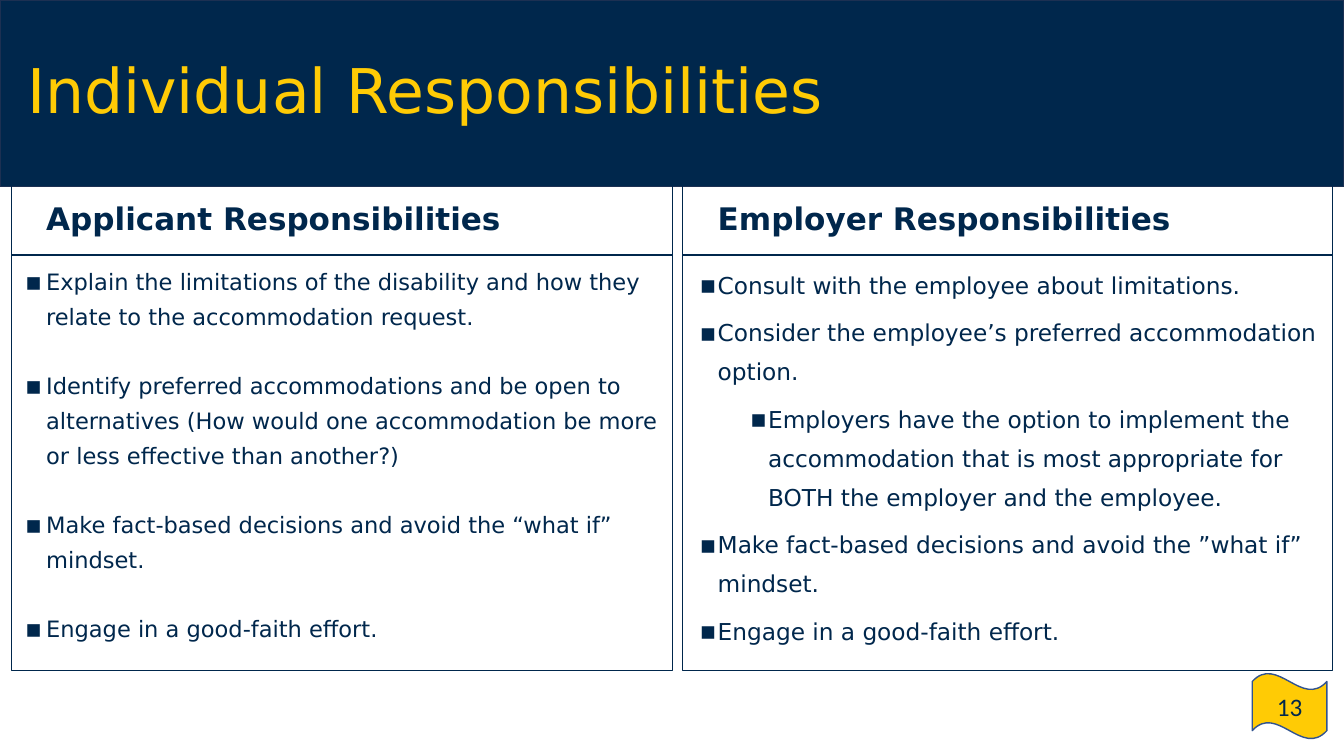
from lxml.etree import SubElement
from pptx import Presentation
from pptx.dml.color import RGBColor
from pptx.enum.shapes import MSO_SHAPE
from pptx.enum.text import MSO_ANCHOR, PP_ALIGN
from pptx.oxml.ns import qn
from pptx.util import Pt

PX = 9144  # EMU per px, 100 px to the inch
COLORS = {"navy": "00274C", "gold": "FFCB05", "band_line": "1C3052", "wave_line": "31538F"}
FONT = "DejaVu Sans"
HEADING_HEIGHT = 69

APPLICANT = {
    "heading": "Applicant Responsibilities",
    "size": 16.1, "line_spacing": 1.3, "gap": 24, "hanging": 21, "bullet_size": 112,
    "items": [
        (0, "Explain the limitations of the disability and how they relate to the accommodation request."),
        (0, "Identify preferred accommodations and be open to alternatives "
            "(How would one accommodation be more or less effective than another?)"),
        (0, "Make fact-based decisions and avoid the “what if” mindset."),
        (0, "Engage in a good-faith effort."),
    ],
}
EMPLOYER = {
    "heading": "Employer Responsibilities",
    "size": 16.6, "line_spacing": 1.4, "gap": 6, "hanging": 18, "bullet_size": 108,
    "items": [
        (0, "Consult with the employee about limitations."),
        (0, "Consider the employee’s preferred accommodation option."),
        (1, "Employers have the option to implement the accommodation that is "
            "most appropriate for BOTH the employer and the employee."),
        (0, "Make fact-based decisions and avoid the ”what if” mindset."),
        (0, "Engage in a good-faith effort."),
    ],
}


def color(name):
    return RGBColor.from_string(COLORS[name])


def add_box(slide, kind, box, fill, line, line_width, anchor=MSO_ANCHOR.MIDDLE):
    shape = slide.shapes.add_shape(kind, *(length * PX for length in box))
    shape.shadow.inherit = False
    if fill:
        shape.fill.solid()
        shape.fill.fore_color.rgb = color(fill)
    else:
        shape.fill.background()
    shape.line.color.rgb = color(line)
    shape.line.width = Pt(line_width)
    shape.text_frame.word_wrap = True
    shape.text_frame.vertical_anchor = anchor
    return shape


def write(paragraph, text, size, text_color="navy", font=FONT, bold=False, **formats):
    run = paragraph.add_run()
    run.text = text
    for name, value in {"size": Pt(size), "name": font, "bold": bold}.items():
        setattr(run.font, name, value)
    run.font.color.rgb = color(text_color)
    for name, value in {"alignment": PP_ALIGN.LEFT, **formats}.items():
        setattr(paragraph, name, value)


def set_indent(paragraph, left, first_line):
    properties = paragraph._p.get_or_add_pPr()
    properties.set("marL", str(left * PX))
    properties.set("indent", str(first_line * PX))
    return properties


def add_bullet(paragraph, level, hanging, size):
    properties = set_indent(paragraph, 25 + 50 * level, -hanging)
    bullet_color = SubElement(properties, qn("a:buClr"))
    SubElement(bullet_color, qn("a:srgbClr"), val=COLORS["navy"])
    SubElement(properties, qn("a:buSzPct"), val=str(size * 1000))
    SubElement(properties, qn("a:buFont"), typeface=FONT)
    SubElement(properties, qn("a:buChar"), char="▪")


def add_title_band(slide, box):
    left, top, width, height = box
    add_box(slide, MSO_SHAPE.RECTANGLE, box, "navy", "band_line", 1)
    title_box = (left + 17, top + 20, 1021, height - 40)
    title = slide.shapes.add_textbox(*(length * PX for length in title_box))
    title.text_frame.word_wrap = True
    title.text_frame.vertical_anchor = MSO_ANCHOR.MIDDLE
    write(title.text_frame.paragraphs[0], "Individual Responsibilities", 44, "gold",
          line_spacing=0.9)


def add_page_number(slide, box):
    wave = add_box(slide, MSO_SHAPE.WAVE, box, "gold", "wave_line", 1)
    write(wave.text_frame.paragraphs[0], "13", 18, font="Calibri", alignment=PP_ALIGN.CENTER)


def add_column(slide, box, column):
    left, top, width, height = box
    heading = add_box(slide, MSO_SHAPE.RECTANGLE, (left, top, width, HEADING_HEIGHT),
                      None, "navy", 0.75)
    paragraph = heading.text_frame.paragraphs[0]
    write(paragraph, column["heading"], 22.2, bold=True, line_spacing=0.9)
    set_indent(paragraph, 50, -25)

    body_box = (left, top + HEADING_HEIGHT, width, height - HEADING_HEIGHT)
    body = add_box(slide, MSO_SHAPE.RECTANGLE, body_box, None, "navy", 0.75, MSO_ANCHOR.TOP)
    for index, (level, text) in enumerate(column["items"]):
        frame = body.text_frame
        paragraph = frame.add_paragraph() if index else frame.paragraphs[0]
        write(paragraph, text, column["size"], level=level,
              line_spacing=column["line_spacing"],
              space_before=Pt(column["gap"] if index else 0))
        add_bullet(paragraph, level, column["hanging"], column["bullet_size"])


def main():
    presentation = Presentation()
    presentation.slide_width = 1333 * PX
    presentation.slide_height = 750 * PX
    slide = presentation.slides.add_slide(presentation.slide_layouts[6])
    add_title_band(slide, (0, 0, 1333, 185))
    add_page_number(slide, (1242, 668, 74, 65))
    add_column(slide, (11, 184, 656, 481), APPLICANT)
    add_column(slide, (677, 184, 645, 481), EMPLOYER)
    presentation.save("out.pptx")


if __name__ == "__main__":
    main()
